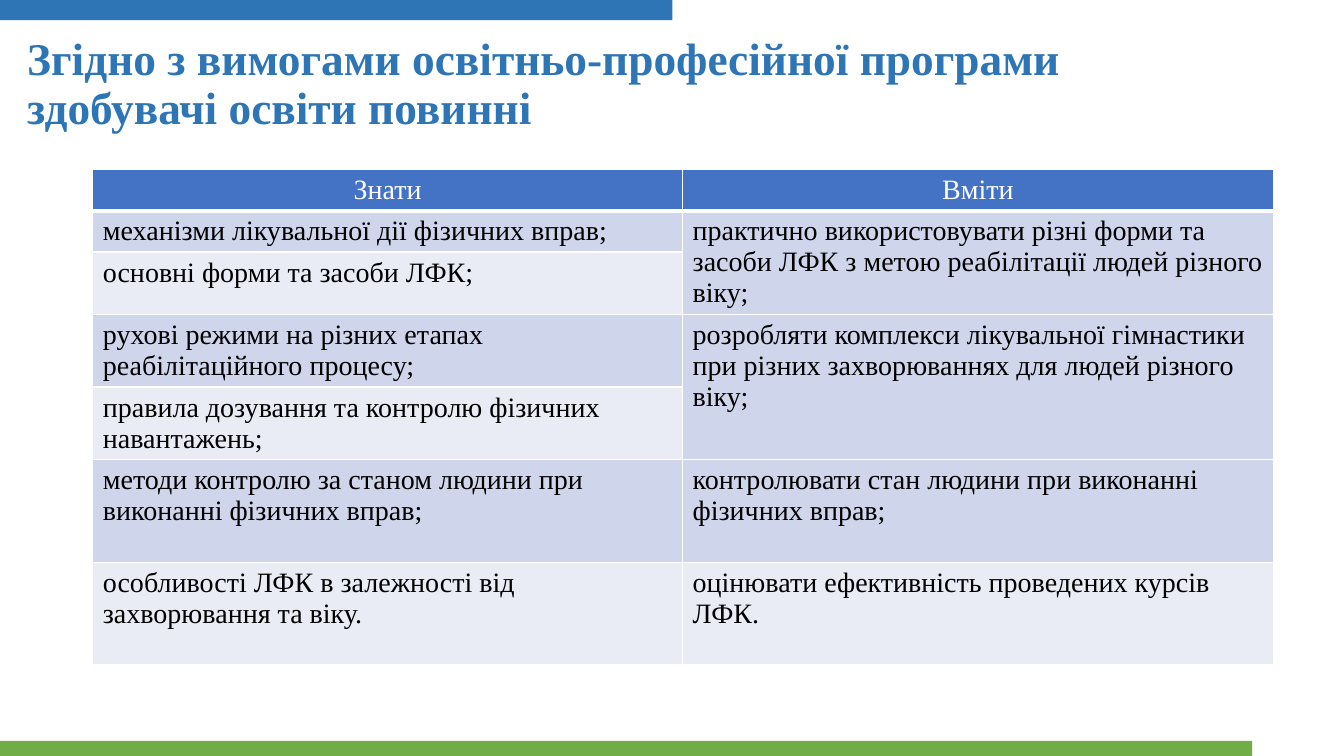
from dataclasses import dataclass

import lxml.etree
import pptx
import pptx.dml.color
import pptx.enum.shapes
import pptx.enum.text
import pptx.oxml.ns
import pptx.util

Inches = pptx.util.Inches
Pt = pptx.util.Pt
PP_ALIGN = pptx.enum.text.PP_ALIGN

FONT = "Times New Roman"
BLUE, GREEN, WHITE, BLACK = "2E75B6", "70AD47", "FFFFFF", "000000"
HEADER_FILL, BAND_FILLS = "4472C4", ("CFD5EA", "E9EBF5")


@dataclass
class Bar:
    left: float
    top: float
    width: float
    height: float
    color: str


@dataclass
class Row:
    height: float
    know: str
    can: str | None  # None continues the cell above


BARS = [
    Bar(-0.01, 7.35, 12.43, 0.18, GREEN),
    Bar(-0.03, -0.03, 6.7, 0.23, BLUE),
]
TITLE = ["Згідно з вимогами освітньо-професійної програми ", "здобувачі освіти повинні"]
COL_WIDTHS = [5.85, 5.86]
ROWS = [
    Row(0.41, "Знати", "Вміти"),
    Row(0.41, "механізми лікувальної дії фізичних вправ;",
        "практично використовувати різні форми та засоби ЛФК з метою реабілітації людей різного віку;"),
    Row(0.62, "основні форми та засоби ЛФК;", None),
    Row(0.72, "рухові режими на різних етапах реабілітаційного процесу;",
        "розробляти комплекси лікувальної гімнастики при різних захворюваннях для людей різного віку;"),
    Row(0.72, "правила дозування та контролю фізичних навантажень;", None),
    Row(1.02, "методи контролю за станом людини при виконанні фізичних вправ;",
        "контролювати стан людини при виконанні фізичних вправ;"),
    Row(1.02, "особливості ЛФК в залежності від захворювання та віку.",
        "оцінювати ефективність проведених курсів ЛФК."),
]


def rgb(color: str) -> pptx.dml.color.RGBColor:
    return pptx.dml.color.RGBColor.from_string(color)


def add_run(p, text: str, size: float, color: str, bold: bool = False) -> None:
    r = p.add_run()
    r.text = text
    r.font.name = FONT
    r.font.size = Pt(size)
    r.font.bold = bold
    r.font.color.rgb = rgb(color)


def add_bar(s, bar: Bar) -> None:
    sp = s.shapes.add_shape(
        pptx.enum.shapes.MSO_SHAPE.RECTANGLE,
        Inches(bar.left), Inches(bar.top), Inches(bar.width), Inches(bar.height))
    sp.shadow.inherit = False
    sp.fill.solid()
    sp.fill.fore_color.rgb = rgb(bar.color)
    sp.line.fill.background()


def set_title(s) -> None:
    sp = s.shapes.title
    sp.left, sp.top = Inches(0.17), Inches(0.4)
    sp.width, sp.height = Inches(12.94), Inches(0.89)
    tf = sp.text_frame
    tf.word_wrap = True
    tf.auto_size = pptx.enum.text.MSO_AUTO_SIZE.NONE
    tf.vertical_anchor = pptx.enum.text.MSO_ANCHOR.MIDDLE
    p = tf.paragraphs[0]
    p.alignment = PP_ALIGN.LEFT
    p.line_spacing = 0.9
    for i, line in enumerate(TITLE):
        if i:
            p.add_line_break()
        add_run(p, line, 32.4, BLUE, bold=True)


def set_borders(cell, bottom: float) -> None:
    """Draw white cell edges, 1 pt wide except for the bottom one."""
    qn = pptx.oxml.ns.qn
    tc_pr = cell._tc.get_or_add_tcPr()
    for side, width in (("L", 1), ("R", 1), ("T", 1), ("B", bottom)):
        ln = lxml.etree.SubElement(tc_pr, qn(f"a:ln{side}"), w=str(Pt(width)))
        fill = lxml.etree.SubElement(ln, qn("a:solidFill"))
        lxml.etree.SubElement(fill, qn("a:srgbClr"), val=WHITE)


def add_requirements_table(s) -> None:
    table = s.shapes.add_table(
        len(ROWS), len(COL_WIDTHS), Inches(0.92), Inches(1.68),
        Inches(sum(COL_WIDTHS)), Inches(sum(row.height for row in ROWS))).table
    for col, width in zip(table.columns, COL_WIDTHS):
        col.width = Inches(width)
    for i, row in enumerate(ROWS):
        header = i == 0
        table.rows[i].height = Inches(row.height)
        for j, text in enumerate((row.know, row.can)):
            cell = table.cell(i, j)
            set_borders(cell, bottom=3 if header else 1)
            cell.fill.solid()
            cell.fill.fore_color.rgb = rgb(HEADER_FILL if header else BAND_FILLS[(i - 1) % 2])
            if text is None:
                table.cell(i - 1, j).merge(cell)
                continue
            p = cell.text_frame.paragraphs[0]
            p.alignment = PP_ALIGN.CENTER if header else PP_ALIGN.LEFT
            add_run(p, text, 20, WHITE if header else BLACK)


def main() -> None:
    prs = pptx.Presentation()
    prs.slide_width, prs.slide_height = Inches(13.33), Inches(7.5)
    s = prs.slides.add_slide(prs.slide_layouts.get_by_name("Title Only"))
    for bar in BARS:
        add_bar(s, bar)
    set_title(s)
    add_requirements_table(s)
    prs.save("out.pptx")


if __name__ == "__main__":
    main()
